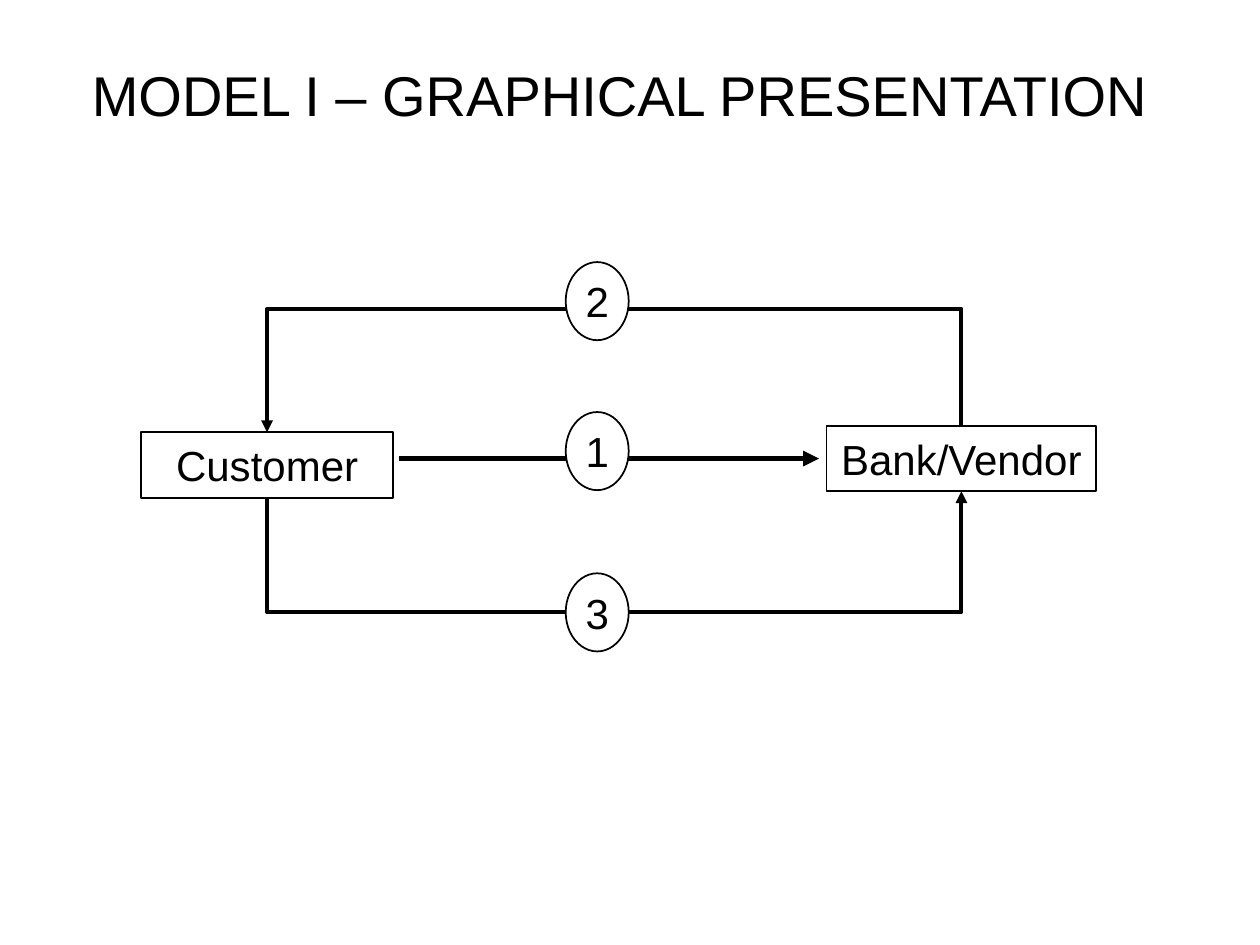
from lxml.etree import SubElement as Sub
from pptx import Presentation
from pptx.dml.color import RGBColor as Rgb
from pptx.enum.shapes import MSO_CONNECTOR as Conn, MSO_SHAPE as Kind
from pptx.enum.text import MSO_ANCHOR as Anchor, PP_ALIGN as Align
from pptx.oxml.ns import qn
from pptx.util import Inches, Pt

HUES = {"ink": "000000", "paper": "FFFFFF"}
COLS, ROWS = 100, 75


def write(shape, text, size=24, font="Arial", hue="ink", wrap=False):
    frame = shape.text_frame
    frame.word_wrap = wrap
    frame.vertical_anchor = Anchor.MIDDLE
    para = frame.paragraphs[0]
    para.alignment = Align.CENTER
    run = para.add_run()
    run.text = text
    run.font.size = Pt(size)
    run.font.name = font
    run.font.color.rgb = Rgb.from_string(HUES[hue])


class Chart:
    def __init__(self):
        self.deck = Presentation()
        self.deck.slide_width = Inches(10)
        self.deck.slide_height = Inches(7.5)
        self.slide = self.deck.slides.add_slide(self.deck.slide_layouts[6])
        self.shapes = self.slide.shapes

    def x(self, cols):
        return round(self.deck.slide_width * cols / COLS)

    def y(self, rows):
        return round(self.deck.slide_height * rows / ROWS)

    def area(self, left, top, wide, high):
        return self.x(left), self.y(top), self.x(wide), self.y(high)

    def title(self, text, *area):
        box = self.shapes.add_textbox(*self.area(*area))
        write(box, text, size=32, wrap=True)

    def node(self, kind, text, *area):
        shape = self.shapes.add_shape(kind, *self.area(*area))
        shape.shadow.inherit = False
        shape.fill.solid()
        shape.fill.fore_color.rgb = Rgb.from_string(HUES["paper"])
        shape.line.color.rgb = Rgb.from_string(HUES["ink"])
        shape.line.width = Pt(1)
        write(shape, text)
        return shape

    def step(self, text, mid):
        wide, high = 5, 6.2
        self.node(Kind.OVAL, text, 44.9, mid - high / 2, wide, high)

    def style(self, line, width):
        line.line.color.rgb = Rgb.from_string(HUES["ink"])
        line.line.width = Pt(width)
        Sub(line.line._get_or_add_ln(), qn("a:tailEnd"), type="triangle")
        Sub(line._element.spPr, qn("a:effectLst"))

    def arrow(self, start, end, row):
        line = self.shapes.add_connector(
            Conn.STRAIGHT, self.x(start), self.y(row), self.x(end), self.y(row))
        self.style(line, 3)

    def loop(self, start, end, row):
        (x1, y1), (x2, y2) = start, end
        wide, high = abs(y2 - y1), abs(x2 - x1)
        left, top = (x1 + x2 - wide) // 2, (y1 + y2 - high) // 2
        line = self.shapes.add_connector(
            Conn.ELBOW, left + wide, top + high, left, top)
        turn = 90 if x2 > x1 else 270
        line._element.spPr.find(qn("a:xfrm")).set("rot", str(turn * 60000))
        bend = round((self.y(row) - y1) / (y2 - y1) * 100000)
        geom = line._element.spPr.find(qn("a:prstGeom"))
        guides = geom.find(qn("a:avLst"))
        if guides is None:
            guides = Sub(geom, qn("a:avLst"))
        Sub(guides, qn("a:gd"), name="adj1", fmla=f"val {bend}")
        self.style(line, 2.25)


def top_of(box):
    return box.left + box.width // 2, box.top


def base_of(box):
    return box.left + box.width // 2, box.top + box.height


def main():
    chart = Chart()
    bank = chart.node(Kind.RECTANGLE, "Bank/Vendor", 65.6, 33.8, 21.4, 5.2)
    buyer = chart.node(Kind.RECTANGLE, "Customer", 11.2, 34.3, 20, 5.2)
    chart.arrow(31.7, 65, 36.4)
    chart.step("1", 35.8)
    chart.loop(top_of(bank), top_of(buyer), 24.5)
    chart.step("2", 23.9)
    chart.loop(base_of(buyer), base_of(bank), 48.6)
    chart.step("3", 48.6)
    chart.title("MODEL I – GRAPHICAL PRESENTATION", 1.7, 3.3, 95, 8.3)
    chart.deck.save("out.pptx")


if __name__ == "__main__":
    main()
